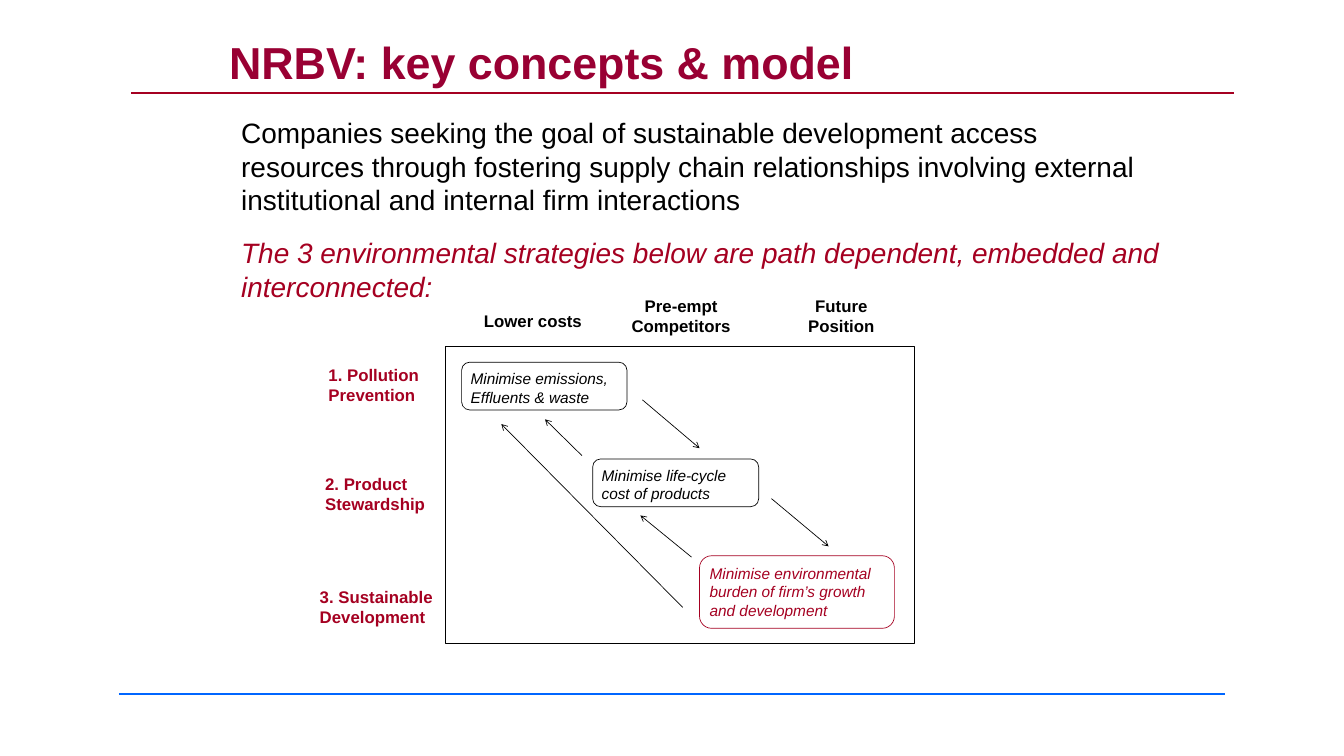
import pptx
import pptx.util
import pptx.dml.color
import pptx.enum.shapes
import pptx.enum.text
import pptx.oxml.ns
import lxml.etree

Inches = pptx.util.Inches
ALIGN = pptx.enum.text.PP_ALIGN
SHAPE = pptx.enum.shapes.MSO_SHAPE
COLORS = {"black": "000000", "white": "FFFFFF", "red": "A50021",
          "wine": "990033", "blue": "0066FF"}
FONT = "Arial"


def color(name):
    return pptx.dml.color.RGBColor.from_string(COLORS[name])


def write(shape, lines, size, ink, bold=False, italic=False,
          align=ALIGN.LEFT, indent=0):
    frame = shape.text_frame
    frame.word_wrap = True
    frame.vertical_anchor = pptx.enum.text.MSO_ANCHOR.TOP
    frame.margin_left = frame.margin_right = Inches(0.1)
    frame.margin_top = frame.margin_bottom = Inches(0.07)
    for number, line in enumerate(lines):
        para = frame.paragraphs[0] if number == 0 else frame.add_paragraph()
        para.alignment = align
        if indent:
            para._p.get_or_add_pPr().set("marL", str(Inches(indent)))
        span = para.add_run()
        span.text = line
        span.font.name = FONT
        span.font.size = pptx.util.Pt(size)
        span.font.bold = bold
        span.font.italic = italic
        span.font.color.rgb = color(ink)


def add_text(page, box, lines, size, ink, **style):
    shape = page.shapes.add_textbox(*map(Inches, box))
    write(shape, lines, size, ink, **style)


def add_box(page, kind, box, ink):
    shape = page.shapes.add_shape(kind, *map(Inches, box))
    shape.shadow.inherit = False
    shape.fill.solid()
    shape.fill.fore_color.rgb = color("white")
    shape.line.color.rgb = color(ink)
    shape.line.width = pptx.util.Pt(0.75)
    return shape


def add_line(page, start, end, ink, width, arrow=False):
    line = page.shapes.add_connector(
        pptx.enum.shapes.MSO_CONNECTOR.STRAIGHT, *map(Inches, start + end))
    line.line.color.rgb = color(ink)
    line.line.width = pptx.util.Pt(width)
    if arrow:
        head = lxml.etree.SubElement(line.line._get_or_add_ln(),
                                     pptx.oxml.ns.qn("a:tailEnd"))
        head.set("type", "arrow")
    lxml.etree.SubElement(line._element.spPr, pptx.oxml.ns.qn("a:effectLst"))


def add_heading(page, left, top):
    add_line(page, (left, top + 0.93), (left + 16.41, top + 0.93), "red", 2.25)
    add_text(page, (left + 1.36, top, 13.84, 0.91),
             ["NRBV: key concepts & model"], 48, "wine", bold=True)


def add_statements(page, left, top):
    add_text(page, (left, top, 14.81, 1.67),
             ["Companies seeking the goal of sustainable development access "
              "resources through fostering supply chain relationships involving "
              "external institutional and internal firm interactions"],
             30, "black", indent=0.85)
    add_text(page, (left, top + 1.79, 15.27, 1.11),
             ["The 3 environmental strategies below are path dependent, "
              "embedded and interconnected:"],
             30, "red", italic=True, indent=0.85)


def add_model(page, left, top, width, height):
    add_box(page, SHAPE.RECTANGLE, (left, top, width, height), "black")

    strategies = [
        (-1.83, 0.21, 1.67, ["1. Pollution", "Prevention"]),
        (-1.88, 1.83, 1.8, ["2. Product", "Stewardship"]),
        (-1.96, 3.51, 2, ["3. Sustainable", "Development"]),
    ]
    for x, y, w, lines in strategies:
        add_text(page, (left + x, top + y, w, 0.71), lines, 18, "red", bold=True)

    benefits = [
        (0.42, -0.59, 1.78, ["Lower costs"]),
        (2.62, -0.82, 1.79, ["Pre-empt", "Competitors"]),
        (5.25, -0.82, 1.3, ["Future", "Position"]),
    ]
    for x, y, w, lines in benefits:
        add_text(page, (left + x, top + y, w, 0.71), lines, 18, "black",
                 bold=True, align=ALIGN.CENTER)

    goals = [
        (0.25, 0.24, 2.46, 0.71, "black",
         ["Minimise emissions,", "Effluents & waste"]),
        (2.2, 1.68, 2.47, 0.71, "black",
         ["Minimise life-cycle cost of products"]),
        (3.79, 3.12, 2.9, 1.08, "red",
         ["Minimise environmental burden of firm’s growth and development"]),
    ]
    for x, y, w, h, ink, lines in goals:
        goal = add_box(page, SHAPE.ROUNDED_RECTANGLE,
                       (left + x, top + y, w, h), ink)
        write(goal, lines, 16.5, ink, italic=True)

    arrows = [
        (2.94, 0.8, 3.79, 1.52),
        (4.86, 2.27, 5.71, 2.98),
        (3.67, 3.14, 2.91, 2.52),
        (2.04, 1.63, 1.49, 1.09),
        (3.54, 3.89, 0.84, 1.16),
    ]
    for x1, y1, x2, y2 in arrows:
        add_line(page, (left + x1, top + y1), (left + x2, top + y2),
                 "black", 0.75, arrow=True)


def main():
    deck = pptx.Presentation()
    deck.slide_width = Inches(20)
    deck.slide_height = Inches(11.25)
    page = deck.slides.add_slide(deck.slide_layouts[6])
    add_line(page, (1.77, 10.33), (18.23, 10.33), "blue", 2.25)
    add_heading(page, 1.95, 0.45)
    add_statements(page, 2.64, 1.65)
    add_model(page, 6.62, 5.15, 6.99, 4.43)
    deck.save("out.pptx")


if __name__ == "__main__":
    main()
